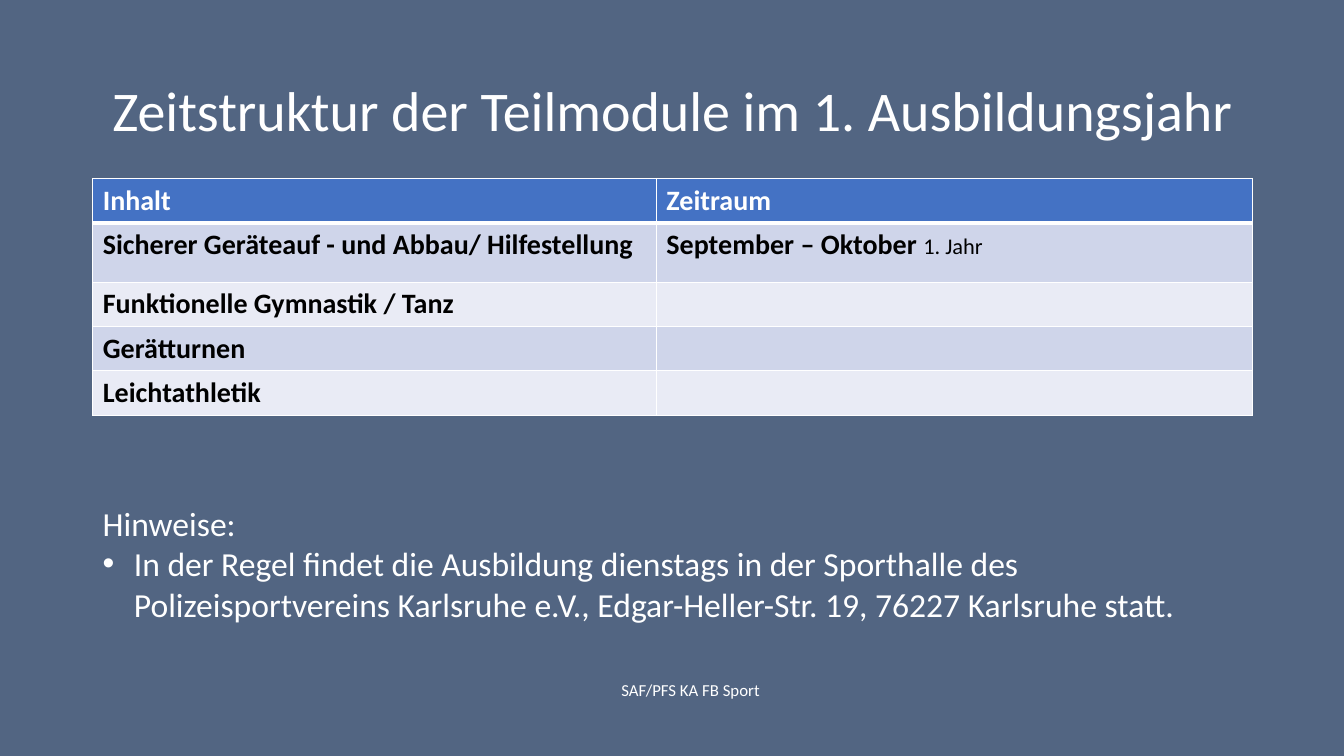
from lxml import etree
from pptx import Presentation
from pptx.dml.color import RGBColor
from pptx.enum.text import MSO_ANCHOR, PP_ALIGN
from pptx.oxml.ns import qn
from pptx.util import Inches, Pt

LEFT, CENTER = PP_ALIGN.LEFT, PP_ALIGN.CENTER
TOP, MIDDLE = MSO_ANCHOR.TOP, MSO_ANCHOR.MIDDLE

COLORS = {
    "background": "526582",
    "white": "FFFFFF",
    "black": "000000",
    "header": "4472C4",
    "odd_row": "CFD5EA",
    "even_row": "E9EBF5",
}
MARGIN, CONTENT_WIDTH = 0.92, 11.5


def color(name):
    return RGBColor.from_string(COLORS[name])


class SlideBuilder:
    """Holds the style and the current slide."""

    font = "Calibri"

    def __init__(self, slide):
        self.slide = slide
        background = slide.background.fill
        background.solid()
        background.fore_color.rgb = color("background")

    def run(self, paragraph, text, size, ink="white", bold=False):
        run = paragraph.add_run()
        run.text = text
        run.font.name = self.font
        run.font.size = Pt(size)
        run.font.bold = bold
        run.font.color.rgb = color(ink)

    def text(self, box, lines, size, align=LEFT, anchor=TOP, spacing=1.0):
        """Add a text box with one paragraph per line and return its paragraphs."""
        frame = self.slide.shapes.add_textbox(*map(Inches, box)).text_frame
        frame.word_wrap = True
        frame.vertical_anchor = anchor
        for number, line in enumerate(lines):
            paragraph = frame.add_paragraph() if number else frame.paragraphs[0]
            paragraph.alignment = align
            paragraph.line_spacing = spacing
            self.run(paragraph, line, size)
        return frame.paragraphs

    def bullet(self, paragraph, indent):
        properties = paragraph._p.get_or_add_pPr()
        properties.set("marL", str(Inches(indent)))
        properties.set("indent", str(-Inches(indent)))
        etree.SubElement(properties, qn("a:buFont"), typeface="Arial")
        etree.SubElement(properties, qn("a:buChar"), char="•")

    def borders(self, cell, widths):
        """Draw white cell borders; widths maps sides L, R, T, B to points."""
        properties = cell._tc.get_or_add_tcPr()
        for side, width in widths.items():
            line = etree.SubElement(properties, qn(f"a:ln{side}"), w=str(Pt(width)))
            fill = etree.SubElement(line, qn("a:solidFill"))
            etree.SubElement(fill, qn("a:srgbClr"), val=COLORS["white"])

    def table(self, left, top, column_widths, row_heights, rows):
        """Add a table; each cell is a list of (text, size, bold) runs."""
        size = (sum(column_widths), sum(row_heights))
        table = self.slide.shapes.add_table(
            len(rows), len(column_widths), *map(Inches, (left, top, *size))).table
        for column, width in zip(table.columns, column_widths):
            column.width = Inches(width)
        for r, (height, row) in enumerate(zip(row_heights, rows)):
            table.rows[r].height = Inches(height)
            band = "header" if r == 0 else "odd_row" if r % 2 else "even_row"
            for c, runs in enumerate(row):
                cell = table.cell(r, c)
                self.borders(cell, {"L": 1, "R": 1, "T": 3 if r == 1 else 1,
                                    "B": 3 if r == 0 else 1})
                cell.fill.solid()
                cell.fill.fore_color.rgb = color(band)
                for text, points, bold in runs:
                    self.run(cell.text_frame.paragraphs[0], text, points,
                             "black" if r else "white", bold)


def topic(text):
    return [(text, 20, True)]


def main():
    presentation = Presentation()
    presentation.slide_width = Inches(13.33)
    presentation.slide_height = Inches(7.5)
    builder = SlideBuilder(presentation.slides.add_slide(presentation.slide_layouts[6]))

    builder.text((MARGIN, 0.4, CONTENT_WIDTH, 1.45),
                 ["Zeitstruktur der Teilmodule im 1. Ausbildungsjahr"],
                 40, CENTER, MIDDLE, 0.9)

    schedule = [
        [topic("Inhalt"), topic("Zeitraum")],
        [topic("Sicherer Geräteauf - und Abbau/ Hilfestellung"),
         topic("September – Oktober ") + [("1. Jahr", 16, False)]],
        [topic("Funktionelle Gymnastik / Tanz"), []],
        [topic("Gerätturnen"), []],
        [topic("Leichtathletik"), []],
    ]
    builder.table(MARGIN, 1.77, [5.59, 5.91], [0.44, 0.59, 0.44, 0.44, 0.44], schedule)

    _, venue = builder.text(
        (MARGIN, 4.94, CONTENT_WIDTH, 1.31),
        ["Hinweise:",
         "In der Regel findet die Ausbildung dienstags in der Sporthalle des "
         "Polizeisportvereins Karlsruhe e.V., Edgar-Heller-Str. 19, "
         "76227 Karlsruhe statt."],
        24)
    builder.bullet(venue, 0.31)

    builder.text((4.42, 6.64, 4.86, 0.4), ["SAF/PFS KA FB Sport"], 12, CENTER, MIDDLE)
    presentation.save("out.pptx")


if __name__ == "__main__":
    main()
